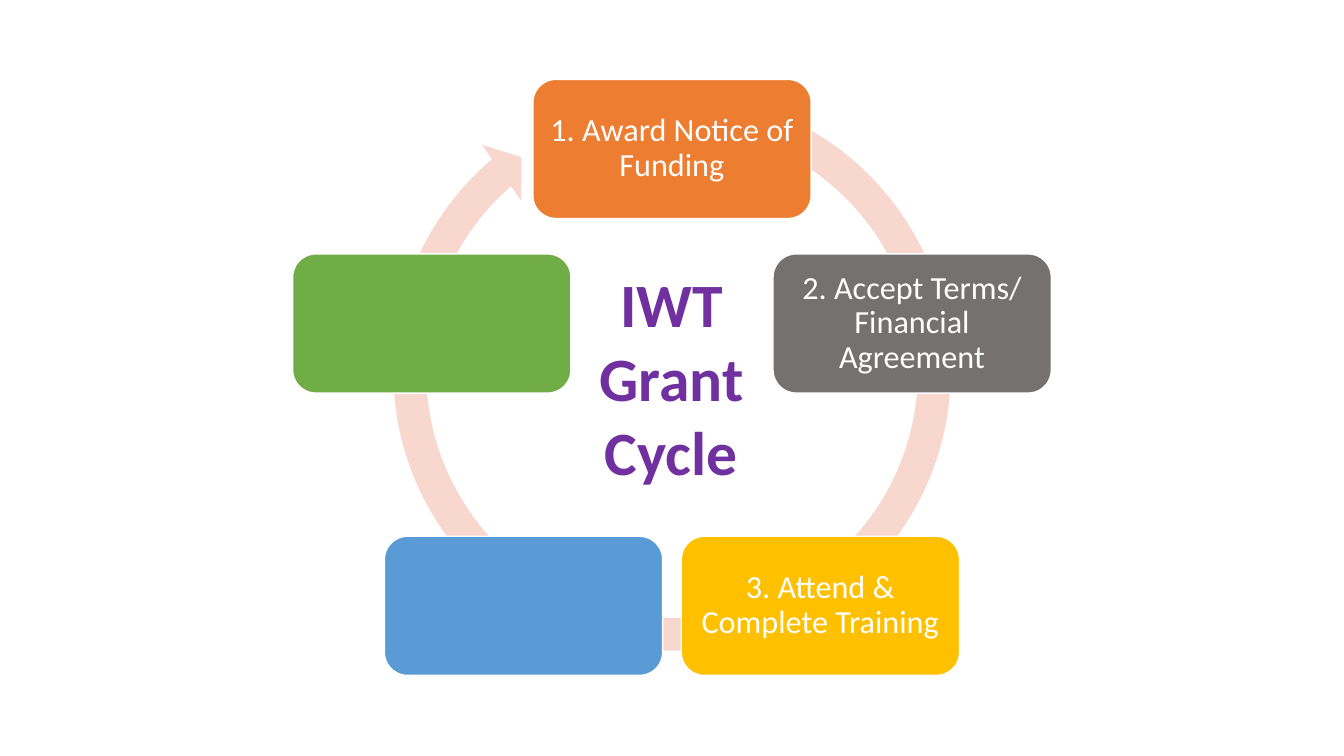
import math

from pptx import Presentation
from pptx import util as u
from pptx.dml import color
from pptx.enum import shapes, text


def paint(target, hex_colour):
    target.solid()
    target.fore_color.rgb = color.RGBColor.from_string(hex_colour)


def write(box, words, size, hex_colour, bold, spacing):
    frame = box.text_frame
    frame.word_wrap = True
    frame.text = words
    for para in frame.paragraphs:
        para.alignment = text.PP_ALIGN.CENTER
        para.line_spacing = spacing
        for span in para.runs:
            span.font.name = "Calibri"
            span.font.size = u.Pt(size)
            span.font.bold = bold
            paint(span.font.fill, hex_colour)


deck = Presentation()
deck.slide_width = u.Pt(960)
deck.slide_height = u.Pt(540)
page = deck.slides.add_slide(deck.slide_layouts[6])

ring_size = 423.4
ring = page.shapes.add_shape(
    shapes.MSO_SHAPE.CIRCULAR_ARROW,
    u.Pt(480 - ring_size / 2), u.Pt(54), u.Pt(ring_size), u.Pt(ring_size))
for index, percent in enumerate([5.54, 330.68, 13767.6, 17391, 5.76]):
    ring.adjustments[index] = percent / 100
ring.shadow.inherit = False
paint(ring.fill, "F8D7CE")
ring.line.fill.background()

steps = [
    ("1. Award Notice of Funding", "ED7D31"),
    ("2. Accept Terms/ Financial Agreement", "767171"),
    ("3. Attend & Complete Training", "FFC000"),
    ("", "5B9BD5"),
    ("", "70AD47"),
]
centre_x, centre_y, radius = 480, 286.8, 180.4
card_width, card_height = 198.8, 99.4
for index, (words, fill) in enumerate(steps):
    angle = 2 * math.pi * index / len(steps)
    left = centre_x + radius * math.sin(angle) - card_width / 2
    top = centre_y - radius * math.cos(angle) - card_height / 2
    card = page.shapes.add_shape(
        shapes.MSO_SHAPE.ROUNDED_RECTANGLE,
        u.Pt(left), u.Pt(top), u.Pt(card_width), u.Pt(card_height))
    card.shadow.inherit = False
    paint(card.fill, fill)
    paint(card.line.fill, "FFFFFF")
    card.line.width = u.Pt(1)
    if words:
        frame = card.text_frame
        frame.margin_left = frame.margin_right = u.Pt(6.9)
        frame.margin_top = frame.margin_bottom = u.Pt(6.9)
        frame.vertical_anchor = text.MSO_ANCHOR.MIDDLE
        write(card, words, 23, "FFFFFF", False, 0.9)

title = page.shapes.add_textbox(u.Pt(412.6), u.Pt(186.5), u.Pt(134), u.Pt(167))
title.text_frame.auto_size = text.MSO_AUTO_SIZE.SHAPE_TO_FIT_TEXT
write(title, "IWT\nGrant Cycle", 44, "7030A0", True, 1.0)

deck.save("out.pptx")
